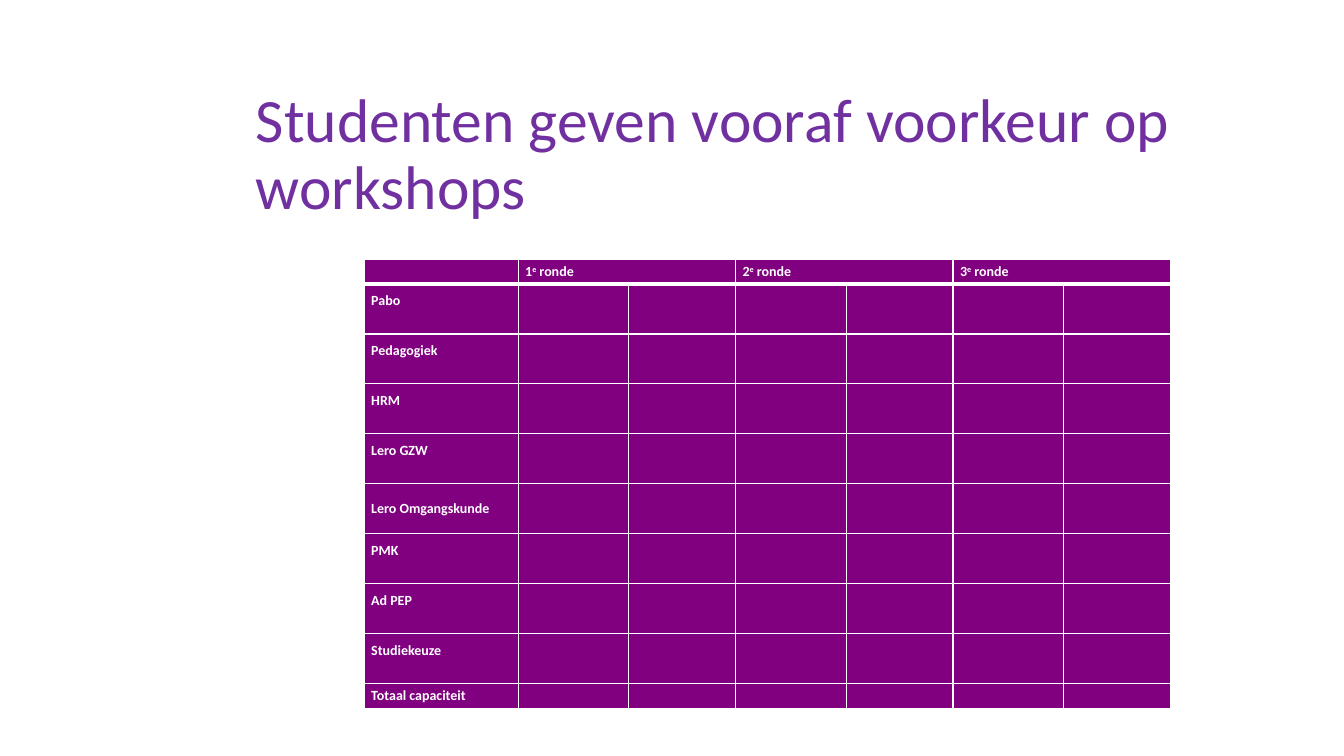
import dataclasses

import pptx
import pptx.dml.color
import pptx.enum.text
import pptx.oxml.ns
import pptx.slide
import pptx.table
import pptx.text.text
import pptx.util
from lxml import etree

Pt = pptx.util.Pt
RGB = pptx.dml.color.RGBColor
MIDDLE = pptx.enum.text.MSO_ANCHOR.MIDDLE


@dataclasses.dataclass(frozen=True)
class Theme:
    face: str = "Calibri"
    title: RGB = RGB(0x70, 0x30, 0xA0)
    fill: RGB = RGB(0x80, 0x00, 0x80)
    white: RGB = RGB(0xFF, 0xFF, 0xFF)
    big: float = 44
    small: float = 10
    thin: float = 1
    thick: float = 3


@dataclasses.dataclass(frozen=True)
class Row:
    label: str
    height: float = 35.7
    lift: float = 12  # bottom inset that raises the label


THEME = Theme()
LOW = 17.85
ROWS = [
    Row("", LOW, 0),
    Row("Pabo"),
    Row("Pedagogiek"),
    Row("HRM"),
    Row("Lero GZW"),
    Row("Lero Omgangskunde", lift=0),
    Row("PMK"),
    Row("Ad PEP"),
    Row("Studiekeuze"),
    Row("Totaal capaciteit", LOW, 0),
]
ROUNDS = 3
WIDTHS = [110] + [79, 76.33] * ROUNDS


def style(para: pptx.text.text._Paragraph, size: float, color: RGB, bold: bool) -> None:
    font = para.font
    font.name, font.size, font.bold = THEME.face, Pt(size), bold
    font.color.rgb = color


def edge(cell: pptx.table._Cell, side: str, width: float) -> None:
    """Add one white border; it has to precede the cell fill."""
    props = cell._tc.get_or_add_tcPr()
    qn = pptx.oxml.ns.qn
    line = etree.SubElement(props, qn(f"a:ln{side}"), w=str(Pt(width)))
    solid = etree.SubElement(line, qn("a:solidFill"))
    etree.SubElement(solid, qn("a:srgbClr"), val=str(THEME.white))


def dress(cell: pptx.table._Cell, row: int) -> None:
    """Set the borders, fill, insets and type of a cell."""
    top = THEME.thick if row == 1 else THEME.thin
    base = THEME.thick if row == 0 else THEME.thin
    for side, width in zip("LRTB", (THEME.thin, THEME.thin, top, base)):
        edge(cell, side, width)
    cell.fill.solid()
    cell.fill.fore_color.rgb = THEME.fill
    cell.vertical_anchor = MIDDLE
    cell.margin_left = cell.margin_right = Pt(5)
    cell.margin_top = cell.margin_bottom = Pt(0)
    para = cell.text_frame.paragraphs[0]
    style(para, THEME.small, THEME.white, True)
    # An empty cell takes its line height from the end mark.
    etree.SubElement(para._p, pptx.oxml.ns.qn("a:endParaRPr"), sz=str(THEME.small * 100))


def add_title(slide: pptx.slide.Slide) -> None:
    box = slide.shapes.add_textbox(Pt(175.7), Pt(59.8), Pt(756), Pt(103.7))
    frame = box.text_frame
    frame.word_wrap = True
    frame.vertical_anchor = MIDDLE
    para = frame.paragraphs[0]
    para.text = "Studenten geven vooraf voorkeur op workshops"
    para.line_spacing = 0.9
    style(para, THEME.big, THEME.title, False)


def add_grid(slide: pptx.slide.Slide) -> None:
    high = sum(row.height for row in ROWS)
    table = slide.shapes.add_table(
        len(ROWS), len(WIDTHS), Pt(260.2), Pt(185), Pt(sum(WIDTHS)), Pt(high)
    ).table
    table.first_row = table.horz_banding = False
    for col, width in zip(table.columns, WIDTHS):
        col.width = Pt(width)
    for num, row in enumerate(ROWS):
        table.rows[num].height = Pt(row.height)
        for col in range(len(WIDTHS)):
            dress(table.cell(num, col), num)
        if row.label:
            cell = table.cell(num, 0)
            cell.margin_bottom = Pt(row.lift)
            cell.text_frame.paragraphs[0].add_run().text = row.label
    for num in range(1, ROUNDS + 1):
        head = table.cell(0, 2 * num - 1)
        head.merge(table.cell(0, 2 * num))
        para = head.text_frame.paragraphs[0]
        for text in (str(num), "e", " ronde"):
            run = para.add_run()
            run.text = text
            if text == "e":
                run.font._element.set("baseline", "30000")


def main() -> None:
    deck = pptx.Presentation()
    deck.slide_width, deck.slide_height = Pt(960), Pt(540)
    slide = deck.slides.add_slide(deck.slide_layouts[6])
    add_title(slide)
    add_grid(slide)
    deck.save("out.pptx")


if __name__ == "__main__":
    main()
